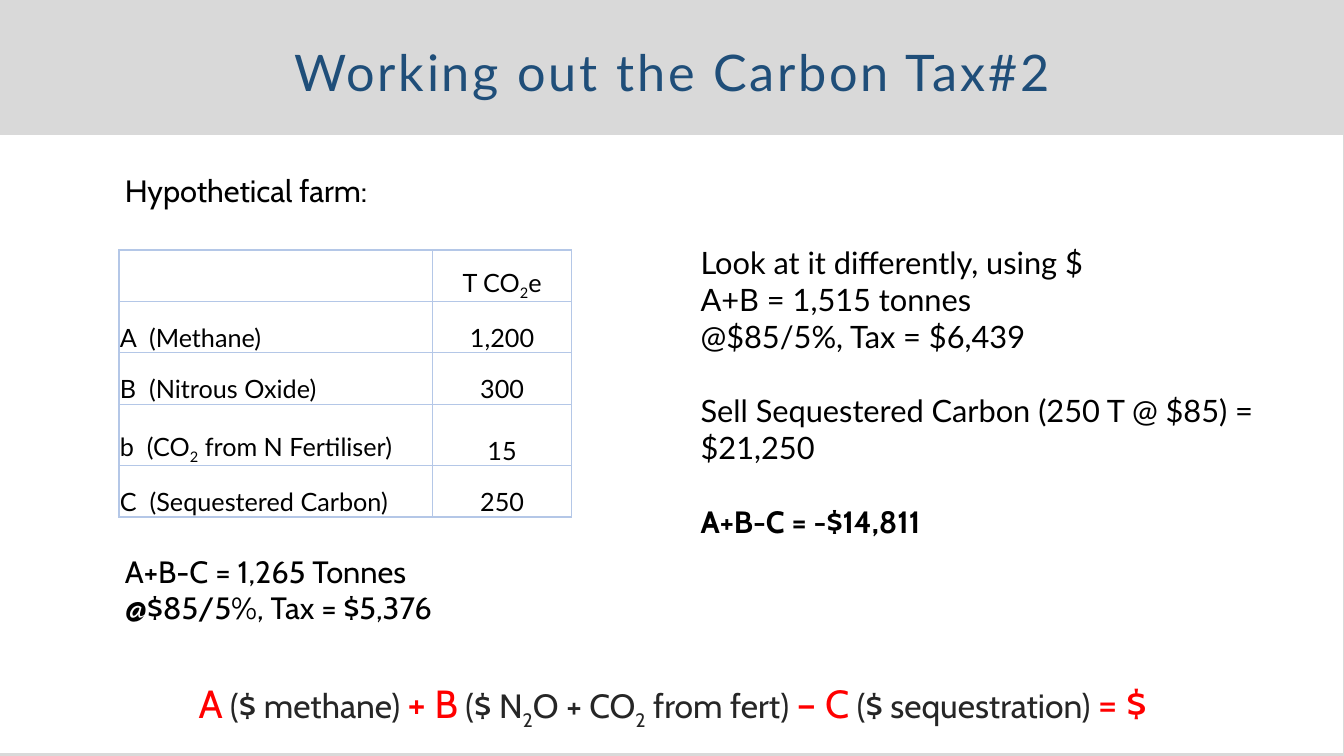
from pptx import Presentation
from pptx.dml.color import RGBColor
from pptx.enum.shapes import MSO_SHAPE
from pptx.enum.text import MSO_ANCHOR, MSO_AUTO_SIZE, PP_ALIGN
from pptx.oxml.ns import qn
from pptx.util import Pt
from lxml.etree import SubElement

BLACK, WHITE, GREY = "000000", "FFFFFF", "D9D9D9"
NAVY, RED, DARK, BORDER = "1F4E79", "FF0000", "262626", "B4C7E7"
BODY, HEAD = "Cabin", "Lato"


def px(n):
    return n * 9144


def rgb(value):
    return RGBColor.from_string(value)


class SlideBuilder:
    """Draws styled elements on the current slide; text between underscores is subscript."""

    def __init__(self, prs):
        self.s = prs.slides.add_slide(prs.slide_layouts[6])

    def style(self, p, name, size=None, color=None, align=PP_ALIGN.LEFT):
        p.alignment = align
        p.font.name = name
        if size:
            p.font.size = Pt(size)
        if color:
            p.font.color.rgb = rgb(color)

    def runs(self, p, text, size=None, color=None):
        for i, part in enumerate(text.split("_")):
            r = p.add_run()
            r.text = part
            if size:
                r.font.size = Pt(size)
            if color:
                r.font.color.rgb = rgb(color)
            if i % 2:
                r._r.get_or_add_rPr().set("baseline", "-25000")

    def rect(self, x, y, w, h, fill):
        sp = self.s.shapes.add_shape(MSO_SHAPE.RECTANGLE, px(x), px(y), px(w), px(h))
        sp.shadow.inherit = False
        sp.fill.solid()
        sp.fill.fore_color.rgb = rgb(fill)
        sp.line.fill.background()

    def frame(self, x, y, w, h):
        tf = self.s.shapes.add_textbox(px(x), px(y), px(w), px(h)).text_frame
        tf.word_wrap = True
        tf.auto_size = MSO_AUTO_SIZE.SHAPE_TO_FIT_TEXT
        return tf

    def title(self, x, y, w, h, text):
        p = self.frame(x, y, w, h).paragraphs[0]
        self.style(p, HEAD, 36, NAVY, PP_ALIGN.CENTER)
        p.line_spacing = 1.14
        self.runs(p, text)
        p.runs[0]._r.get_or_add_rPr().set("spc", "200")

    def lines(self, x, y, w, h, lines, name=BODY):
        tf = self.frame(x, y, w, h)
        for i, text in enumerate(lines):
            p = tf.add_paragraph() if i else tf.paragraphs[0]
            self.style(p, name, 22, BLACK)
            self.runs(p, text)
        return tf

    def formula(self, x, y, w, h, parts):
        p = self.frame(x, y, w, h).paragraphs[0]
        self.style(p, BODY, align=PP_ALIGN.CENTER)
        p.line_spacing = 1.2
        p.space_after = Pt(6)
        for i, text in enumerate(parts):
            self.runs(p, text, *((24, DARK) if i % 2 else (28, RED)))

    def borders(self, cell):
        tcPr = cell._tc.get_or_add_tcPr()
        for side in ("a:lnL", "a:lnR", "a:lnT", "a:lnB"):
            ln = SubElement(tcPr, qn(side), w=str(Pt(1)))
            SubElement(SubElement(ln, qn("a:solidFill")), qn("a:srgbClr"), val=BORDER)

    def table(self, x, y, widths, heights, rows):
        table = self.s.shapes.add_table(len(rows), len(widths), px(x), px(y),
                                        px(sum(widths)), px(sum(heights))).table
        table.first_row = table.horz_banding = False
        for column, w in zip(table.columns, widths):
            column.width = px(w)
        for i, (row, h) in enumerate(zip(rows, heights)):
            table.rows[i].height = px(h)
            for j, text in enumerate(row):
                cell = table.cell(i, j)
                self.borders(cell)
                cell.fill.background()
                cell.vertical_anchor = MSO_ANCHOR.BOTTOM
                cell.margin_left = cell.margin_right = cell.margin_top = px(1)
                cell.margin_bottom = 0
                p = cell.text_frame.paragraphs[0]
                self.style(p, HEAD, 18, BLACK, PP_ALIGN.CENTER if j else PP_ALIGN.LEFT)
                if text:
                    self.runs(p, text)


def main():
    prs = Presentation()
    prs.slide_width, prs.slide_height = px(1333), px(750)
    b = SlideBuilder(prs)
    b.rect(0, 0, 1333, 750, GREY)
    b.rect(-1, 134, 1333, 613, WHITE)
    b.title(0, 27, 1334, 75, "Working out the Carbon Tax#2")
    b.lines(114, 165, 482, 47, ["Hypothetical farm:"])
    b.formula(118, 659, 1098, 62, [
        "A", " ($ methane) ", "+ B", " ($ N_2_O + CO_2_ from fert) ",
        "– C", " ($ sequestration) ", "= $"])
    b.table(118, 248, [311, 138], [51, 51, 51, 61, 51], [
        ("", "T CO_2_e"),
        ("A  (Methane)", "1,200"),
        ("B  (Nitrous Oxide)", "300"),
        ("b  (CO_2_ from N Fertiliser)", "15"),
        ("C  (Sequestered Carbon)", "250")])
    b.lines(114, 543, 482, 84, ["A+B-C = 1,265 Tonnes", "@$85/5%, Tax = $5,376"])
    tf = b.lines(685, 237, 592, 306, [
        "Look at it differently, using $",
        "A+B = 1,515 tonnes",
        "@$85/5%, Tax = $6,439",
        "Sell Sequestered Carbon (250 T @ $85) = $21,250",
        "A+B-C = -$14,811"], HEAD)
    sale, result = tf.paragraphs[3:]
    sale.space_before = result.space_before = Pt(26.4)
    result.font.name = BODY
    result.font.bold = True
    prs.save("out.pptx")


if __name__ == "__main__":
    main()
